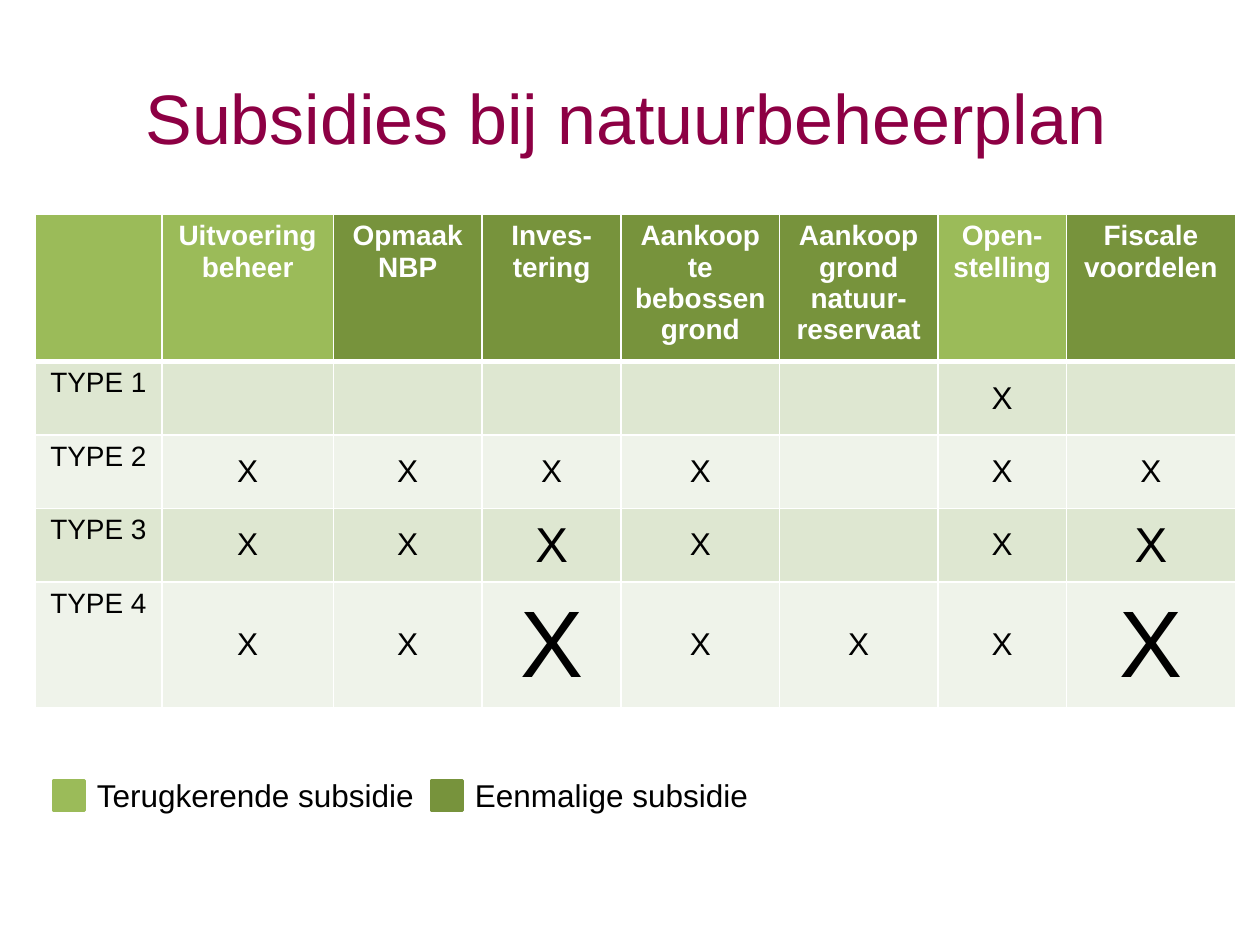
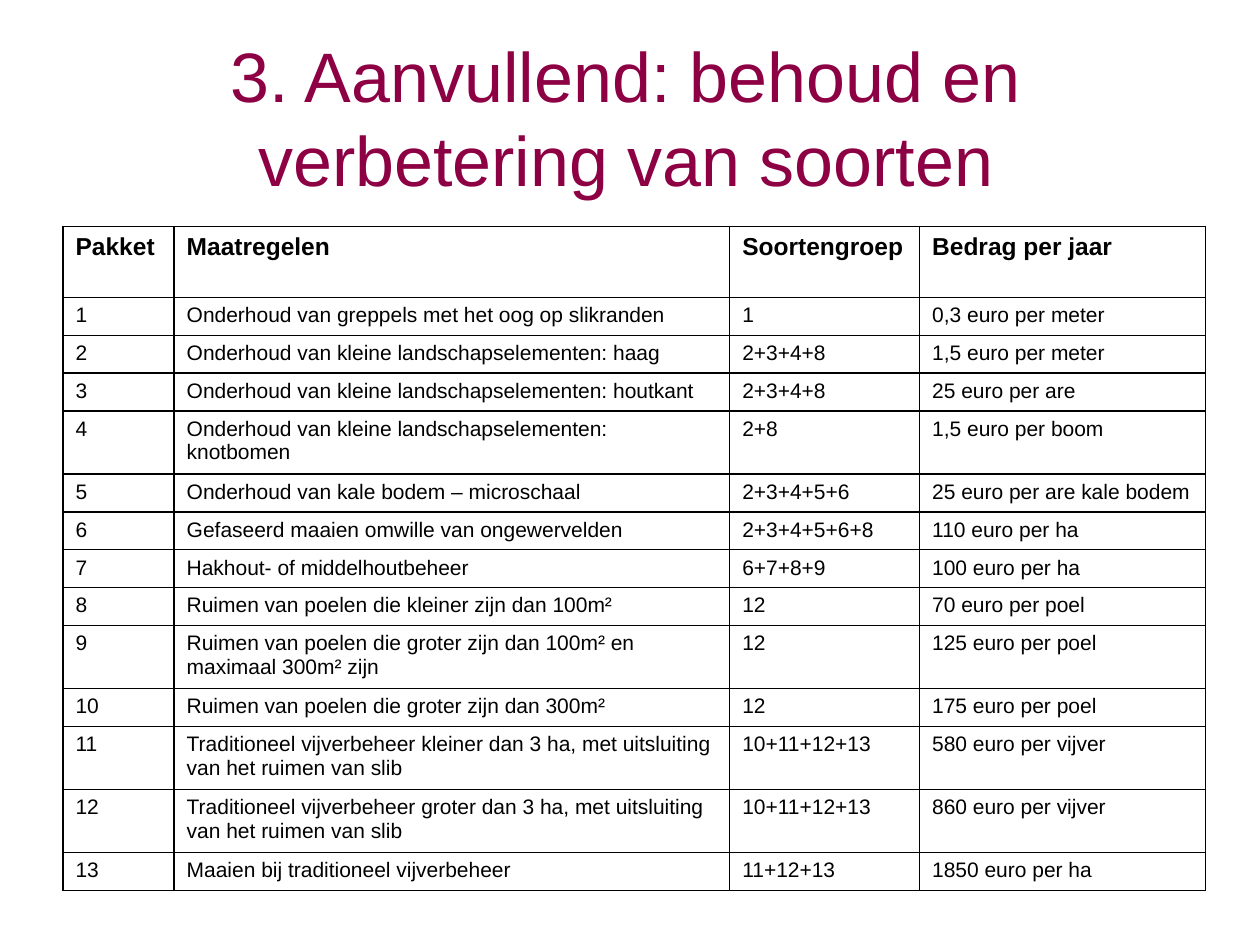
import dataclasses

import lxml.etree
import pptx
import pptx.dml.color
import pptx.enum.shapes
import pptx.enum.text
import pptx.oxml.ns
import pptx.util

Pt = pptx.util.Pt
qn = pptx.oxml.ns.qn
ALIGN = pptx.enum.text.PP_ALIGN
ANCHOR = pptx.enum.text.MSO_ANCHOR


@dataclasses.dataclass(frozen=True)
class Theme:
    font: str = "Arial"
    title: str = "8D0044"
    ink: str = "000000"
    paper: str = "FFFFFF"
    recurring: str = "9BBB59"
    one_off: str = "77933C"
    band_dark: str = "DEE7D1"
    band_light: str = "EFF3EA"
    title_size: float = 40
    title_leading: float = 48
    mark_size: float = 18
    header_size: float = 16
    measure_header_size: float = 14
    measure_size: float = 12
    rule: float = 1
    header_rule: float = 3


THEME = Theme()
TITLE_BOX = (31, 20, 653, 88.5)

SUBSIDIES = [
    ("Uitvoering beheer", THEME.recurring),
    ("Opmaak NBP", THEME.one_off),
    ("Inves-tering", THEME.one_off),
    ("Aankoop te bebossen grond", THEME.one_off),
    ("Aankoop grond natuur-reservaat", THEME.one_off),
    ("Open-stelling", THEME.recurring),
    ("Fiscale voordelen", THEME.one_off),
]
SUBSIDY_WIDTHS = [72.5, 98, 85, 79.5, 90.5, 90.5, 73.5, 96.5]
SUBSIDY_HEIGHTS = [83.5, 42, 42, 42, 72]
MARK_SIZES = [
    ("TYPE 1", [0, 0, 0, 0, 0, 18, 0]),
    ("TYPE 2", [18, 18, 18, 18, 0, 18, 18]),
    ("TYPE 3", [18, 18, 28, 18, 0, 18, 28]),
    ("TYPE 4", [18, 18, 54, 18, 18, 18, 54]),
]

MEASURE_HEADERS = ["Pakket", "Maatregelen", "Soortengroep", "Bedrag per jaar"]
MEASURE_WIDTHS = [63.5, 317.5, 108.5, 163.5]
MEASURE_HEADER_HEIGHT, LINE_HEIGHT, DOUBLE_LINE_HEIGHT = 40.5, 21.5, 34.2
DOUBLE_LINE_PACKAGES = {4, 9, 11, 12}
MEASURES = [
    ("Onderhoud van greppels met het oog op slikranden", "1", "0,3 euro per meter"),
    ("Onderhoud van kleine landschapselementen: haag", "2+3+4+8", "1,5 euro per meter"),
    ("Onderhoud van kleine landschapselementen: houtkant", "2+3+4+8", "25 euro per are"),
    ("Onderhoud van kleine landschapselementen: knotbomen", "2+8", "1,5 euro per boom"),
    ("Onderhoud van kale bodem – microschaal", "2+3+4+5+6", "25 euro per are kale bodem"),
    ("Gefaseerd maaien omwille van ongewervelden", "2+3+4+5+6+8", "110 euro per ha"),
    ("Hakhout- of middelhoutbeheer", "6+7+8+9", "100 euro per ha"),
    ("Ruimen van poelen die kleiner zijn dan 100m²", "12", "70 euro per poel"),
    ("Ruimen van poelen die groter zijn dan 100m² en maximaal 300m² zijn", "12", "125 euro per poel"),
    ("Ruimen van poelen die groter zijn dan 300m²", "12", "175 euro per poel"),
    ("Traditioneel vijverbeheer kleiner dan 3 ha, met uitsluiting van het ruimen van slib",
     "10+11+12+13", "580 euro per vijver"),
    ("Traditioneel vijverbeheer groter dan 3 ha, met uitsluiting van het ruimen van slib",
     "10+11+12+13", "860 euro per vijver"),
    ("Maaien bij traditioneel vijverbeheer", "11+12+13", "1850 euro per ha"),
]


def rgb(value):
    return pptx.dml.color.RGBColor.from_string(value)


def apply_format(target, formats):
    for attribute, value in formats.items():
        setattr(target, attribute, value)


def write(frame, text, size, color, bold=False, align=ALIGN.LEFT):
    paragraph = frame.paragraphs[0]
    paragraph.alignment = align
    run = paragraph.add_run()
    run.text = text
    apply_format(run.font, {"name": THEME.font, "size": Pt(size), "bold": bold})
    run.font.color.rgb = rgb(color)
    return paragraph


def set_borders(cell, color, widths):
    properties = cell._tc.get_or_add_tcPr()
    for position, (side, width) in enumerate(widths.items()):
        line = lxml.etree.Element(qn(f"a:ln{side}"), w=str(Pt(width)))
        fill = lxml.etree.SubElement(line, qn("a:solidFill"))
        lxml.etree.SubElement(fill, qn("a:srgbClr"), val=color)
        properties.insert(position, line)


def add_grid(slide, box, widths, heights):
    left, top = box
    grid = slide.shapes.add_table(
        len(heights), len(widths), Pt(left), Pt(top), Pt(sum(widths)), Pt(sum(heights))
    ).table
    apply_format(grid, {"first_row": False, "horz_banding": False})
    for column, width in zip(grid.columns, widths):
        column.width = Pt(width)
    for row, height in zip(grid.rows, heights):
        row.height = Pt(height)
    return grid


def add_title(slide, box, text):
    frame = slide.shapes.add_textbox(*map(Pt, box)).text_frame
    apply_format(frame, {
        "word_wrap": True,
        "vertical_anchor": ANCHOR.MIDDLE,
        "margin_top": Pt(5),
        "margin_bottom": 0,
    })
    paragraph = write(frame, text, THEME.title_size, THEME.title, align=ALIGN.CENTER)
    paragraph.line_spacing = Pt(THEME.title_leading)


def add_subsidy_table(slide, box):
    grid = add_grid(slide, box, SUBSIDY_WIDTHS, SUBSIDY_HEIGHTS)
    fills = [[THEME.recurring] + [color for _, color in SUBSIDIES]]
    for index in range(len(MARK_SIZES)):
        band = THEME.band_light if index % 2 else THEME.band_dark
        fills.append([band] * len(SUBSIDY_WIDTHS))
    for row, colors in enumerate(fills):
        for column, color in enumerate(colors):
            cell = grid.cell(row, column)
            cell.fill.solid()
            cell.fill.fore_color.rgb = rgb(color)
            set_borders(cell, THEME.paper, {
                "L": THEME.rule,
                "R": THEME.rule,
                "T": THEME.header_rule if row == 1 else THEME.rule,
                "B": THEME.header_rule if row == 0 else THEME.rule,
            })
    for column, (subsidy, _) in enumerate(SUBSIDIES, 1):
        write(grid.cell(0, column).text_frame, subsidy, THEME.header_size,
              THEME.paper, True, ALIGN.CENTER)
    for row, (plan_type, sizes) in enumerate(MARK_SIZES, 1):
        write(grid.cell(row, 0).text_frame, plan_type, THEME.header_size,
              THEME.ink, align=ALIGN.CENTER)
        for column, size in enumerate(sizes, 1):
            if size:
                cell = grid.cell(row, column)
                cell.vertical_anchor = ANCHOR.MIDDLE
                write(cell.text_frame, "X", size, THEME.ink, align=ALIGN.CENTER)


def add_legend(slide, box):
    left, top, width, height = box
    tab, swatch_size = 216, 17.3
    legend = slide.shapes.add_group_shape().shapes
    frame = legend.add_textbox(Pt(left + 17.3), Pt(top), Pt(width - 17.3), Pt(height)).text_frame
    frame.word_wrap = True
    tabs = lxml.etree.SubElement(frame.paragraphs[0]._p.get_or_add_pPr(), qn("a:tabLst"))
    lxml.etree.SubElement(tabs, qn("a:tab"), pos=str(Pt(tab)), algn="l")
    write(frame, "Terugkerende subsidie\tEenmalige subsidie", THEME.mark_size, THEME.ink)
    for index, color in enumerate((THEME.recurring, THEME.one_off)):
        swatch = legend.add_shape(
            pptx.enum.shapes.MSO_SHAPE.RECTANGLE,
            Pt(left + index * tab), Pt(top + 6), Pt(swatch_size), Pt(swatch_size),
        )
        swatch.shadow.inherit = False
        swatch.fill.solid()
        swatch.fill.fore_color.rgb = rgb(color)
        swatch.line.color.rgb = rgb(color)
        swatch.line.width = Pt(2)


def add_measure_table(slide, box):
    heights = [MEASURE_HEADER_HEIGHT] + [
        DOUBLE_LINE_HEIGHT if package in DOUBLE_LINE_PACKAGES else LINE_HEIGHT
        for package in range(1, len(MEASURES) + 1)
    ]
    grid = add_grid(slide, box, MEASURE_WIDTHS, heights)
    rows = [MEASURE_HEADERS] + [
        [str(package), *measure] for package, measure in enumerate(MEASURES, 1)
    ]
    for row, texts in enumerate(rows):
        size = THEME.measure_size if row else THEME.measure_header_size
        for column, text in enumerate(texts):
            cell = grid.cell(row, column)
            cell.fill.background()
            set_borders(cell, THEME.ink, dict.fromkeys("LRTB", THEME.rule))
            write(cell.text_frame, text, size, THEME.ink, bold=row == 0)


def build_subsidy_slide(slide):
    add_title(slide, TITLE_BOX, "Subsidies bij natuurbeheerplan")
    add_subsidy_table(slide, (20, 122.5))
    add_legend(slide, (31, 440, 407.5, 29))


def build_measure_slide(slide):
    add_title(slide, TITLE_BOX, "3. Aanvullend: behoud en verbetering van soorten")
    add_measure_table(slide, (36, 129.5))


def main():
    deck = pptx.Presentation()
    apply_format(deck, {"slide_width": Pt(720), "slide_height": Pt(540)})
    for build in (build_subsidy_slide, build_measure_slide):
        build(deck.slides.add_slide(deck.slide_layouts[6]))
    deck.save("out.pptx")


if __name__ == "__main__":
    main()
